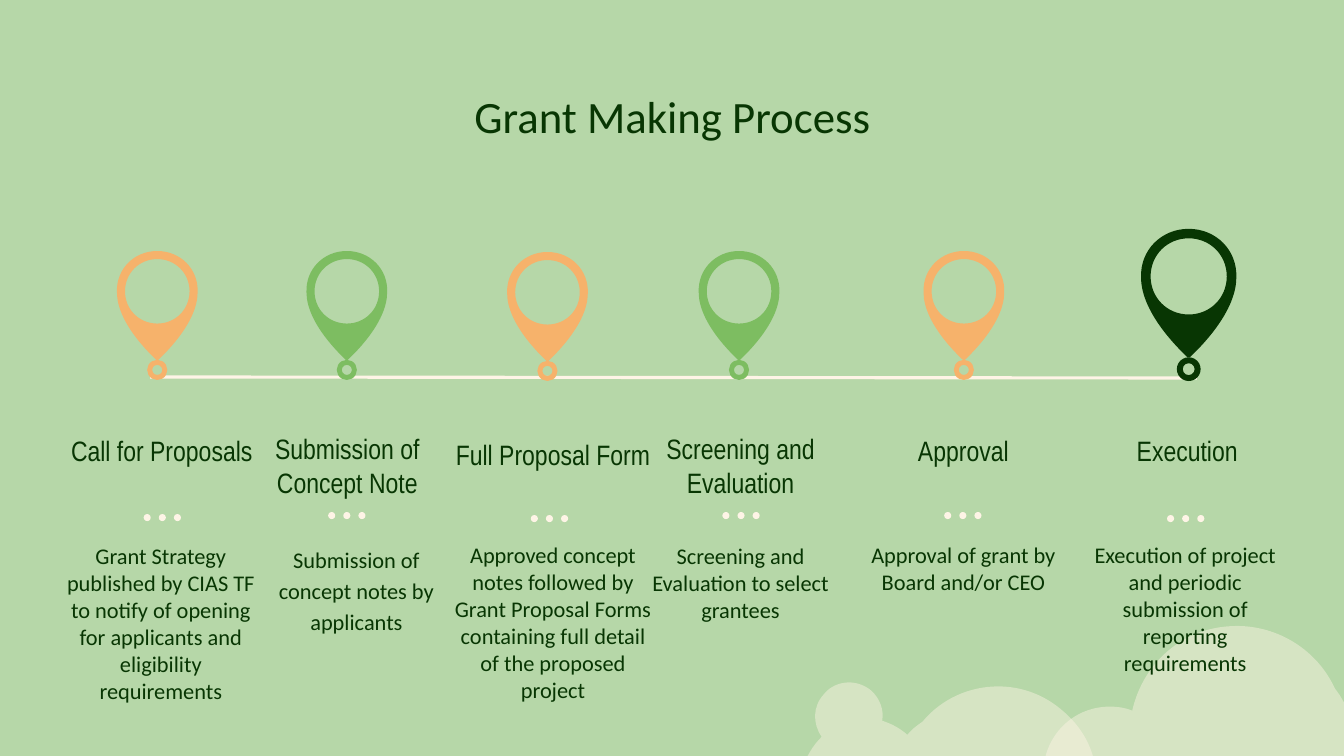
from dataclasses import dataclass

from lxml.etree import SubElement
from pptx import Presentation
from pptx.dml.color import RGBColor
from pptx.enum.shapes import MSO_CONNECTOR, MSO_SHAPE
from pptx.enum.text import MSO_ANCHOR, MSO_AUTO_SIZE, PP_ALIGN
from pptx.oxml.ns import qn
from pptx.util import Emu, Pt

PX = 9144  # 100 px to the inch
MINT, CREAM, DARK, ORANGE, GREEN = "B6D7A8", "FEF4E6", "083603", "F6B26B", "7DBD61"
HEAD_FONT, BODY_FONT = "Arial Narrow", "Calibri"
BOX_W, HEAD_H, BODY_H, INSET = 221, 64, 129, 13
DOT, DOT_STEP, RING = 7, 15, 20

Point = tuple[float, float]
Curve = tuple[float, ...]  # two numbers: a line; six numbers: a Bezier curve


@dataclass
class Outline:
    start: Point
    curves: list[Curve]


@dataclass
class Step:
    heading: str
    body: str
    color: str
    pin: tuple[int, int]  # centre of the pin's top edge
    head: tuple[int, int]
    text: tuple[int, int]
    dots: tuple[int, int]  # centre x and top of the dots
    scale: float = 1.0
    line_spacing: float = 1.0
    space_after: float = 0


STEPS = [
    Step("Call for Proposals",
         "Grant Strategy published by CIAS TF to notify of opening for applicants "
         "and eligibility requirements",
         ORANGE, (156, 249), (50, 412), (49, 525), (161, 510)),
    Step("Submission of Concept Note", "Submission of concept notes by applicants",
         GREEN, (344, 249), (234, 444), (243, 525), (344, 508),
         line_spacing=1.15, space_after=21.3),
    Step("Full Proposal Form",
         "Approved concept notes followed by Grant Proposal Forms containing full "
         "detail of the proposed project",
         ORANGE, (543, 250), (438, 416), (438, 524), (545, 511)),
    Step("Screening and Evaluation", "Screening and Evaluation to select grantees",
         GREEN, (733, 249), (624, 444), (624, 525), (735, 508)),
    Step("Approval", "Approval of grant by Board and/or CEO",
         ORANGE, (956, 249), (845, 412), (845, 524), (955, 508)),
    Step("Execution",
         "Execution of project and periodic submission of reporting requirements",
         DARK, (1179, 227), (1067, 412), (1065, 524), (1176, 511), scale=1.18),
]

# Pin outline and its round hole, measured from the centre of the top edge
PIN = [
    Outline((0, 0), [(23, 0, 41, 18, 40, 41), (40, 72, 5, 104, 1, 108), (-1, 108),
                     (-5, 104, -40, 72, -40, 41), (-41, 18, -23, 0, 0, 0)]),
    Outline((0, 8), [(-18, 8, -32, 22, -32, 40), (-32, 58, -18, 72, 0, 72),
                     (18, 72, 32, 58, 32, 40), (32, 22, 18, 8, 0, 8)]),
]
CLOUDS = [
    Outline((1227, 621), [
        (1267, 621, 1306, 644, 1324, 683), (1328, 688, 1331, 693, 1333, 697),
        (1333, 750), (1037, 750), (1042, 732, 1054, 716, 1073, 707),
        (1082, 703, 1091, 701, 1101, 701), (1108, 701, 1116, 702, 1123, 705),
        (1130, 674, 1150, 646, 1181, 631), (1196, 624, 1212, 621, 1227, 621)]),
    Outline((842, 677), [
        (833, 677, 823, 681, 817, 689), (806, 701, 806, 718, 815, 731),
        (807, 739, 804, 745, 801, 750), (1084, 750),
        (1079, 733, 1069, 718, 1055, 706), (1036, 689, 1013, 681, 990, 681),
        (962, 681, 934, 693, 915, 716), (909, 720, 904, 724, 900, 729),
        (892, 722, 884, 718, 875, 715), (877, 705, 873, 693, 864, 685),
        (858, 680, 850, 677, 842, 677)]),
]


def px(n: float) -> Emu:
    return Emu(round(n * PX))


def rgb(color: str) -> RGBColor:
    return RGBColor.from_string(color)


def paint(sp, color: str) -> None:
    sp.shadow.inherit = False
    sp.fill.solid()
    sp.fill.fore_color.rgb = rgb(color)
    sp.line.fill.background()


def bend(sp, curves: list[Curve]) -> None:
    """Join each three lines that stand for a Bezier curve into that curve."""
    lines = iter(list(sp._element.iter(qn("a:lnTo"))))
    for curve in curves:
        line = next(lines)
        if len(curve) == 6:
            line.tag = qn("a:cubicBezTo")
            for _ in range(2):
                control = next(lines)
                line.append(control[0])
                control.getparent().remove(control)


def add_outlines(s, outlines: list[Outline], color: str,
                 origin: Point = (0, 0), scale: float = 1.0):
    def place(x: float, y: float) -> tuple[Emu, Emu]:
        return px(origin[0] + x * scale), px(origin[1] + y * scale)

    builder = s.shapes.build_freeform(*place(*outlines[0].start), scale=1.0)
    for i, outline in enumerate(outlines):
        if i > 0:
            builder.move_to(*place(*outline.start))
        builder.add_line_segments(
            [place(*xy) for curve in outline.curves for xy in zip(curve[::2], curve[1::2])])
    sp = builder.convert_to_shape()
    bend(sp, [curve for outline in outlines for curve in outline.curves])
    paint(sp, color)
    return sp


def add_cloud(s, outline: Outline) -> None:
    sp = add_outlines(s, [outline], CREAM)
    color = sp._element.spPr.find(qn("a:solidFill"))[0]
    SubElement(color, qn("a:alpha"), val="45000")


def write(sp, text: str, size: int, font: str, anchor=MSO_ANCHOR.TOP,
          line_spacing: float = 1.0, space_after: float = 0) -> None:
    tf = sp.text_frame
    tf.word_wrap = True
    tf.auto_size = MSO_AUTO_SIZE.NONE
    tf.vertical_anchor = anchor
    tf.margin_left = tf.margin_right = tf.margin_top = tf.margin_bottom = px(INSET)
    p = tf.paragraphs[0]
    p.alignment = PP_ALIGN.CENTER
    p.line_spacing = line_spacing
    p.space_before, p.space_after = Pt(0), Pt(space_after)
    r = p.add_run()
    r.text = text
    r.font.size, r.font.name = Pt(size), font
    r.font.color.rgb = rgb(DARK)


def add_timeline(s) -> None:
    line = s.shapes.add_connector(MSO_CONNECTOR.STRAIGHT,
                                  px(149), px(374), px(1187), px(375))
    line.line.color.rgb = rgb(CREAM)
    line.line.width = Pt(2.25)
    SubElement(line._element.spPr, qn("a:effectLst"))


def add_step(s, step: Step) -> None:
    x, y = step.pin
    add_outlines(s, PIN, step.color, step.pin, step.scale)
    ring = RING * step.scale
    sp = s.shapes.add_shape(MSO_SHAPE.DONUT, px(x - ring / 2), px(y + 108 * step.scale),
                            px(ring), px(ring))
    sp.adjustments[0] = 0.25
    paint(sp, step.color)

    head = s.shapes.add_textbox(*map(px, (*step.head, BOX_W, HEAD_H)))
    write(head, step.heading, 20, HEAD_FONT, MSO_ANCHOR.BOTTOM)
    body = s.shapes.add_textbox(*map(px, (*step.text, BOX_W, BODY_H)))
    write(body, step.body, 16, BODY_FONT,
          line_spacing=step.line_spacing, space_after=step.space_after)

    x, y = step.dots
    for i in (-1, 0, 1):
        dot = s.shapes.add_shape(MSO_SHAPE.OVAL, px(x + i * DOT_STEP - DOT / 2), px(y),
                                 px(DOT), px(DOT))
        paint(dot, CREAM)


def main() -> None:
    prs = Presentation()
    prs.slide_width, prs.slide_height = px(1333), px(750)
    s = prs.slides.add_slide(prs.slide_layouts[5])
    s.background.fill.solid()
    s.background.fill.fore_color.rgb = rgb(MINT)

    for outline in CLOUDS:
        add_cloud(s, outline)
    title = s.shapes.title
    title.left, title.top, title.width, title.height = map(px, (105, 81, 1124, 84))
    write(title, "Grant Making Process", 32, BODY_FONT, line_spacing=0.9)
    add_timeline(s)
    for step in STEPS:
        add_step(s, step)
    prs.save("out.pptx")


if __name__ == "__main__":
    main()
